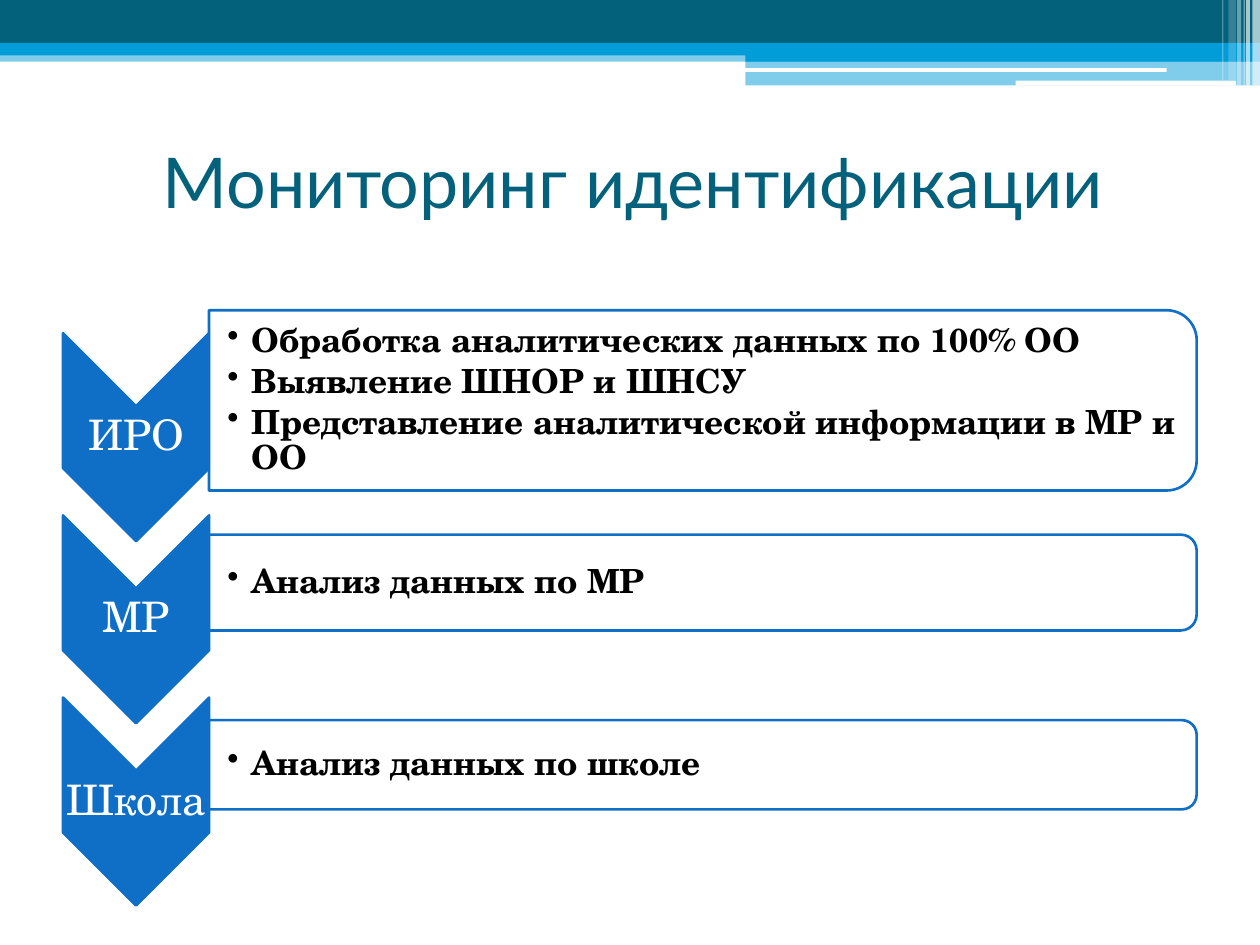
from dataclasses import dataclass

from lxml import etree
from pptx import Presentation
from pptx.dml.color import RGBColor
from pptx.enum.shapes import MSO_SHAPE as Preset
from pptx.enum.text import MSO_ANCHOR as Anchor, PP_ALIGN as Align
from pptx.oxml.ns import qn
from pptx.util import Pt


@dataclass(frozen=True)
class Theme:
    teal: str = "04617B"
    sky: str = "009DD9"
    blue: str = "0F6FC6"
    white: str = "FFFFFF"
    black: str = "000000"
    title_font: str = "Lato"
    body_font: str = "TeX Gyre Schola"
    title_size: float = 40
    label_size: float = 24
    bullet_size: float = 19


theme = Theme()
presentation = Presentation()
presentation.slide_width, presentation.slide_height = Pt(720), Pt(540)
slide = presentation.slides.add_slide(presentation.slide_layouts[6])


def add_filled(preset, box, color, opacity=100, outline=None):
    shape = slide.shapes.add_shape(preset, *map(Pt, box))
    shape.shadow.inherit = False
    shape.fill.solid()
    shape.fill.fore_color.rgb = RGBColor.from_string(color)
    if opacity < 100:
        color_element = shape._element.spPr.find(qn("a:solidFill"))[0]
        etree.SubElement(color_element, qn("a:alpha"), val=str(opacity * 1000))
    if outline:
        shape.line.color.rgb = RGBColor.from_string(outline)
        shape.line.width = Pt(1.5)
    else:
        shape.line.fill.background()
    return shape


def add_text(box, lines, font, size, color, margins, align=None, bold=False):
    """Add a middle-anchored text box and return its paragraphs."""
    frame = slide.shapes.add_textbox(*map(Pt, box)).text_frame
    frame.word_wrap = True
    frame.vertical_anchor = Anchor.MIDDLE
    left, other = margins
    frame.margin_left = Pt(left)
    frame.margin_top = frame.margin_right = frame.margin_bottom = Pt(other)
    frame.text = "\n".join(lines)
    for paragraph in frame.paragraphs:
        paragraph.alignment = align
        run_font = paragraph.runs[0].font
        run_font.name, run_font.size, run_font.bold = font, Pt(size), bold
        run_font.color.rgb = RGBColor.from_string(color)
    return frame.paragraphs


# Header bands: left, top, width, height, colour, opacity
for *box, color, opacity in [
    (0, 28.8, 720, 6.5, theme.sky, 50),
    (0, 0, 720, 24.5, theme.teal, 100),
    (0, 24.5, 720, 7.2, theme.sky, 100),
    (426, 28.1, 294, 7.2, theme.sky, 100),
    (426, 34.9, 294, 14, theme.sky, 50),
]:
    add_filled(Preset.RECTANGLE, box, color, opacity)

for box in [(425.5, 38.9, 241.2, 2.2), (580.3, 46.1, 126, 2.9)]:
    add_filled(Preset.ROUNDED_RECTANGLE, box, theme.white)

# Pale stripes at the right end: left, width, height, opacity
for left, width, height, opacity in [
    (715.7, 4.3, 49, 65),
    (712.1, 2.2, 49, 65),
    (710.6, 0.7, 49, 60),
    (707, 2.2, 49, 40),
    (702, 4.3, 46, 20),
    (698.4, 0.7, 46, 30),
]:
    add_filled(Preset.RECTANGLE, (left, 0, width, height), theme.white, opacity)

add_text((36, 54.7, 648, 96.5), ["Мониторинг идентификации"], theme.title_font,
         theme.title_size, theme.teal, (7.2, 3.6), Align.CENTER)

# Each level: a downward chevron with its label, and a panel of bullets
CHEVRON_LEFT, CHEVRON_WIDTH, CHEVRON_HEIGHT = 36, 83.5, 118.8
PANEL_LEFT, PANEL_WIDTH = 119.4, 564.4
FIRST_CENTER, PITCH, PANEL_RISE = 249.8, 104.1, 21
LABEL_HEIGHT, INDENT = 36, 13.7

levels = [
    ("ИРО", 103, ["Обработка аналитических данных по 100% ОО",
                  "Выявление ШНОР и ШНСУ",
                  "Представление аналитической информации в МР и ОО"]),
    ("МР", 54.8, ["Анализ данных по МР"]),
    ("Школа", 51, ["Анализ данных по школе"]),
]

for index, (label, panel_height, bullets) in enumerate(levels):
    center = FIRST_CENTER + index * PITCH
    panel_center = center - PANEL_RISE

    # Turned by 90 degrees, so length and breadth swap about the centre
    chevron = add_filled(
        Preset.CHEVRON,
        (CHEVRON_LEFT + (CHEVRON_WIDTH - CHEVRON_HEIGHT) / 2,
         center - CHEVRON_WIDTH / 2, CHEVRON_HEIGHT, CHEVRON_WIDTH),
        theme.blue, outline=theme.blue)
    chevron.rotation = 90
    label_box = (CHEVRON_LEFT, center - LABEL_HEIGHT / 2, CHEVRON_WIDTH, LABEL_HEIGHT)
    for paragraph in add_text(label_box, [label], theme.body_font, theme.label_size,
                              theme.white, (1.2, 1.2), Align.CENTER):
        paragraph.line_spacing = 0.9
        paragraph.space_after = Pt(8.4)

    panel = add_filled(
        Preset.ROUND_2_SAME_RECTANGLE,
        (PANEL_LEFT + (PANEL_WIDTH - panel_height) / 2,
         panel_center - PANEL_WIDTH / 2, panel_height, PANEL_WIDTH),
        theme.white, 90, theme.blue)
    panel.rotation = 90
    # The text keeps clear of the rounded corners
    inset = panel_height * 0.05
    text_box = (PANEL_LEFT, panel_center - panel_height / 2 + inset,
                PANEL_WIDTH - inset, panel_height - 2 * inset)
    for paragraph in add_text(text_box, bullets, theme.body_font, theme.bullet_size,
                              theme.black, (10.6, 0.9), bold=True):
        paragraph.line_spacing = 0.9
        paragraph.space_after = Pt(2.85)
        properties = paragraph._p.get_or_add_pPr()
        properties.set("marL", str(Pt(INDENT)))
        properties.set("indent", str(-Pt(INDENT)))
        etree.SubElement(properties, qn("a:buChar"), char="•")

presentation.save("out.pptx")
